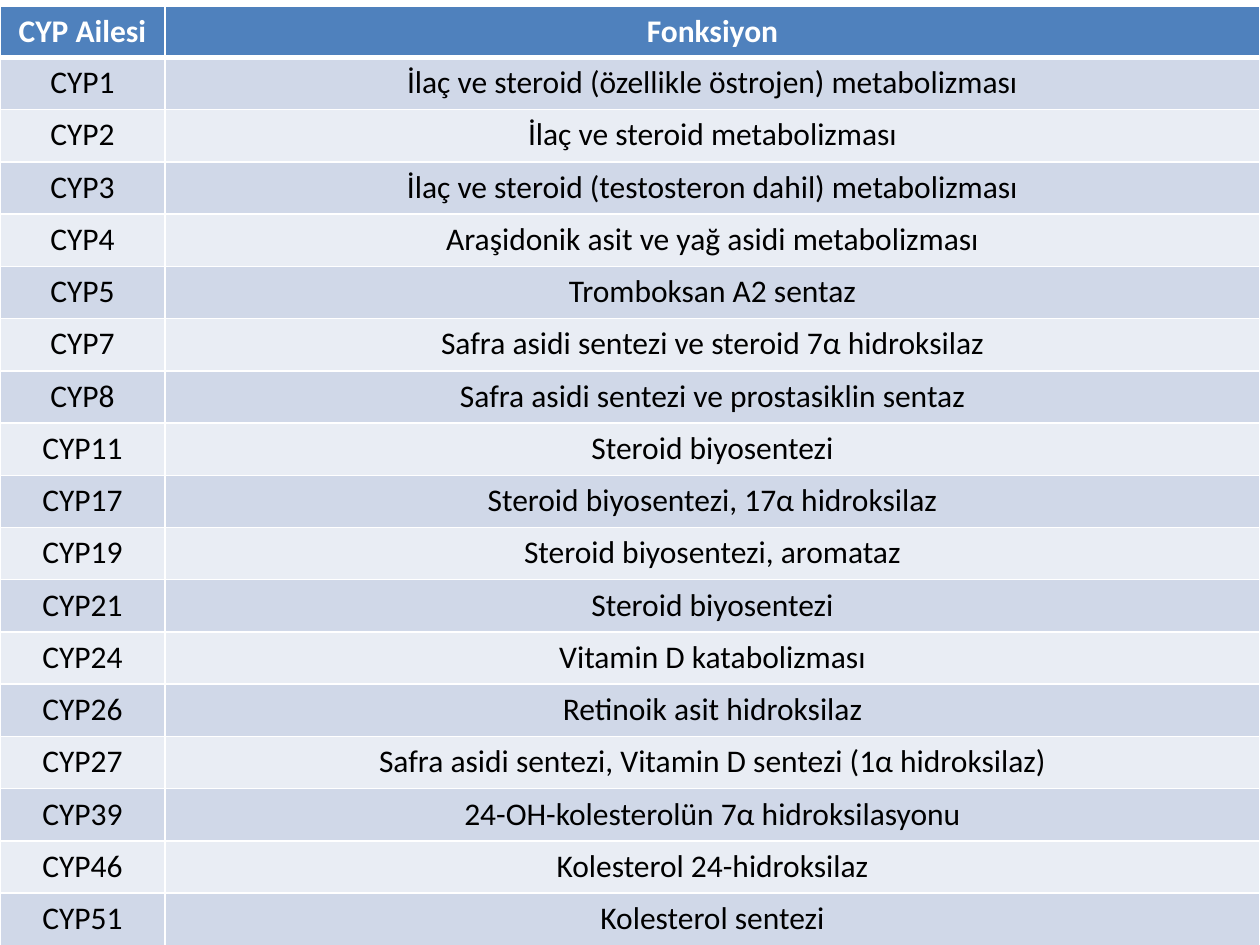
from lxml import etree
from pptx import Presentation
from pptx.dml.color import RGBColor
from pptx.enum.text import PP_ALIGN
from pptx.oxml.ns import qn
from pptx.util import Inches, Pt

CENTER = PP_ALIGN.CENTER
COLORS = {
    "head": "4F81BD",
    "odd": "D0D8E8",
    "even": "E9EDF4",
    "line": "FFFFFF",
    "light": "FFFFFF",
    "dark": "000000",
}
TITLES = ("CYP Ailesi", "Fonksiyon")
ROWS = [
    ("CYP1", "İlaç ve steroid (özellikle östrojen) metabolizması"),
    ("CYP2", "İlaç ve steroid metabolizması"),
    ("CYP3", "İlaç ve steroid (testosteron dahil) metabolizması"),
    ("CYP4", "Araşidonik asit ve yağ asidi metabolizması"),
    ("CYP5", "Tromboksan A2 sentaz"),
    ("CYP7", "Safra asidi sentezi ve steroid 7α hidroksilaz"),
    ("CYP8", "Safra asidi sentezi ve prostasiklin sentaz"),
    ("CYP11", "Steroid biyosentezi"),
    ("CYP17", "Steroid biyosentezi, 17α hidroksilaz"),
    ("CYP19", "Steroid biyosentezi, aromataz"),
    ("CYP21", "Steroid biyosentezi"),
    ("CYP24", "Vitamin D katabolizması"),
    ("CYP26", "Retinoik asit hidroksilaz"),
    ("CYP27", "Safra asidi sentezi, Vitamin D sentezi (1α hidroksilaz)"),
    ("CYP39", "24-OH-kolesterolün 7α hidroksilasyonu"),
    ("CYP46", "Kolesterol 24-hidroksilaz"),
    ("CYP51", "Kolesterol sentezi"),
]


class Deck:
    """Holds the text style and the current slide, and draws tables on it."""

    def __init__(self, slide, font="Calibri", size=18):
        self.slide = slide
        self.font = font
        self.size = Pt(size)

    def border(self, cell, side, width):
        props = cell._tc.get_or_add_tcPr()
        line = etree.SubElement(props, qn(f"a:ln{side}"), w=str(Pt(width)))
        fill = etree.SubElement(line, qn("a:solidFill"))
        etree.SubElement(fill, qn("a:srgbClr"), val=COLORS["line"])

    def cell(self, cell, text, row):
        head = row == 0
        widths = {"L": 1, "R": 1, "T": 3 if row == 1 else 1, "B": 3 if head else 1}
        for side, width in widths.items():
            self.border(cell, side, width)
        shade = "head" if head else "odd" if row % 2 else "even"
        cell.fill.solid()
        cell.fill.fore_color.rgb = RGBColor.from_string(COLORS[shade])
        cell.text = text
        para = cell.text_frame.paragraphs[0]
        para.alignment = CENTER
        para.font.name = self.font
        para.font.size = self.size
        para.font.bold = head
        para.font.color.rgb = RGBColor.from_string(COLORS["light" if head else "dark"])

    def table(self, rows, left, top, height, widths, first):
        frame = self.slide.shapes.add_table(
            len(rows), len(widths), Inches(left), Inches(top),
            Inches(sum(widths)), Inches(height))
        table = frame.table
        for col, width in zip(table.columns, widths):
            col.width = Inches(width)
        rest = (height - first) / (len(rows) - 1)
        for i, texts in enumerate(rows):
            table.rows[i].height = Inches(rest if i else first)
            for j, text in enumerate(texts):
                self.cell(table.cell(i, j), text, i)


def main():
    show = Presentation()
    show.slide_width = Inches(10)
    show.slide_height = Inches(7.5)
    deck = Deck(show.slides.add_slide(show.slide_layouts[6]))
    deck.table([TITLES, *ROWS], left=0, top=0.05, height=7.45,
               widths=(1.31, 8.69), first=0.4)
    show.save("out.pptx")


if __name__ == "__main__":
    main()
